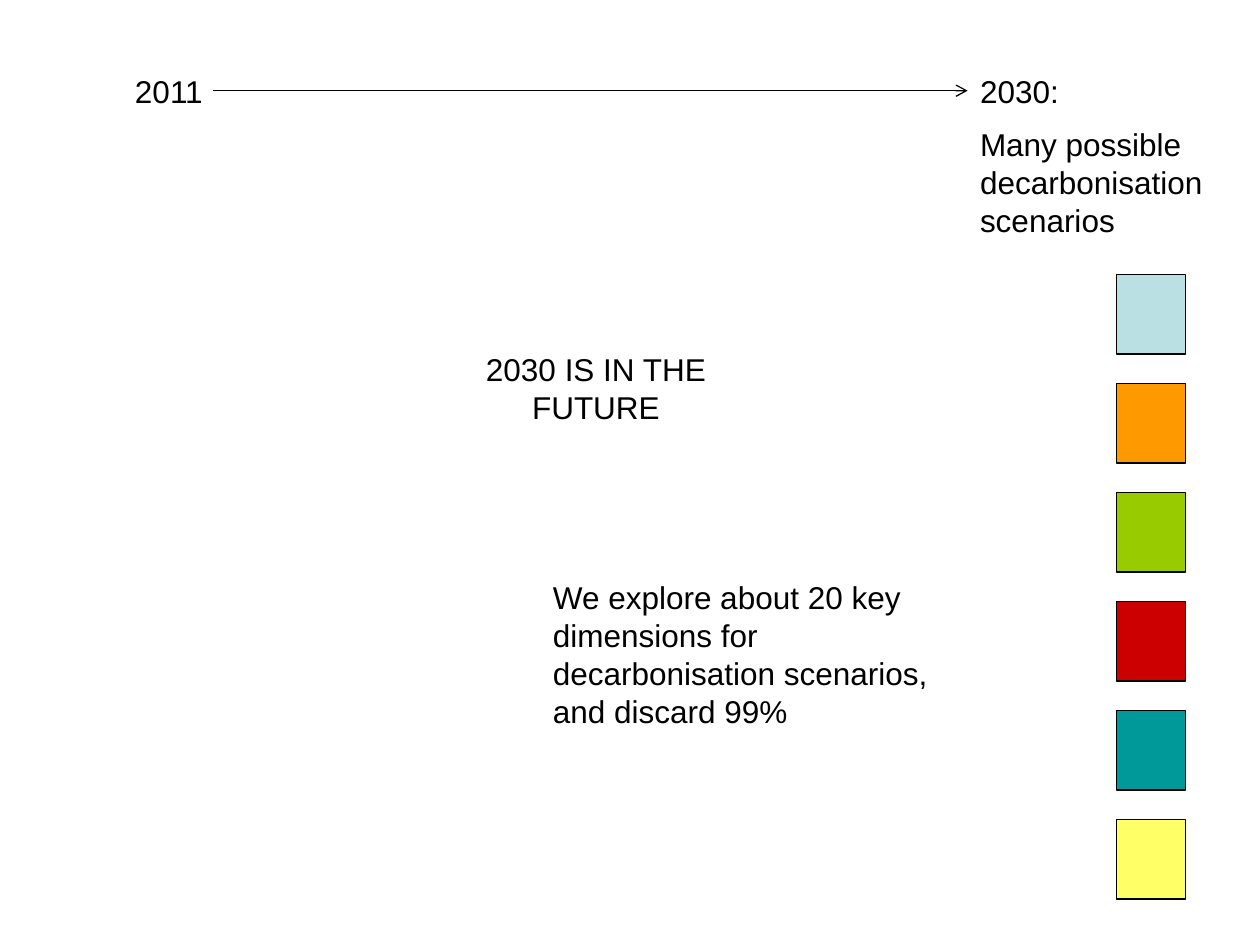
"""Build the slide on decarbonisation scenarios between 2011 and 2030."""
from lxml import etree
from pptx import Presentation
from pptx.dml.color import RGBColor
from pptx.enum.shapes import MSO_CONNECTOR, MSO_SHAPE
from pptx.enum.text import MSO_AUTO_SIZE, PP_ALIGN
from pptx.oxml.ns import qn
from pptx.util import Inches, Pt

LEFT, CENTER = PP_ALIGN.LEFT, PP_ALIGN.CENTER
GROW = MSO_AUTO_SIZE.SHAPE_TO_FIT_TEXT
RECTANGLE = MSO_SHAPE.RECTANGLE
STRAIGHT = MSO_CONNECTOR.STRAIGHT
BLACK = "000000"


def paint(color_format, color):
    color_format.fore_color.rgb = RGBColor.from_string(color)


prs = Presentation()
prs.slide_width, prs.slide_height = Inches(10), Inches(7.5)
slide = prs.slides.add_slide(prs.slide_layouts[6])

scenario_left, first_top, row_pitch = 8.86, 2.18, 0.865
scenario_colors = ["BBE0E3", "FF9900", "99CC00", "CC0000", "009999", "FFFF66"]
for row, color in enumerate(scenario_colors):
    scenario = slide.shapes.add_shape(
        RECTANGLE, Inches(scenario_left), Inches(first_top + row * row_pitch),
        Inches(0.55), Inches(0.63))
    scenario.shadow.inherit = False
    scenario.fill.solid()
    paint(scenario.fill, color)
    scenario.line.fill.solid()
    paint(scenario.line.fill, BLACK)
    scenario.line.width = Pt(0.75)

timeline_top, timeline_end = 0.52, 7.68
statements = [
    (timeline_end, timeline_top, 1.97, 1.45, LEFT,
     ["2030:", "Many possible decarbonisation scenarios"]),
    (0.59, timeline_top, 1.5, 0.4, CENTER, ["2011"]),
    (3.43, 2.73, 2.6, 0.7, CENTER, ["2030 IS IN THE FUTURE"]),
    (4.29, 4.54, 3.23, 1.31, LEFT,
     ["We explore about 20 key dimensions for decarbonisation scenarios, "
      "and discard 99%"]),
]
for left, top, width, height, alignment, lines in statements:
    statement = slide.shapes.add_textbox(
        Inches(left), Inches(top), Inches(width), Inches(height)).text_frame
    statement.word_wrap = True
    statement.auto_size = GROW
    statement.text = "\n".join(lines)
    for index, paragraph in enumerate(statement.paragraphs):
        paragraph.alignment = alignment
        paragraph.space_before = Pt(9 if index else 0)
        paragraph.font.name = "Arial"
        paragraph.font.size = Pt(18)
        paragraph.font.color.rgb = RGBColor.from_string(BLACK)

timeline_y = Inches(timeline_top + 0.2)
timeline = slide.shapes.add_connector(
    STRAIGHT, Inches(1.69), timeline_y, Inches(timeline_end), timeline_y)
timeline.line.fill.solid()
paint(timeline.line.fill, BLACK)
timeline.line.width = Pt(0.75)
outline = timeline.line._get_or_add_ln()
etree.SubElement(outline, qn("a:tailEnd"), type="arrow")
etree.SubElement(outline.getparent(), qn("a:effectLst"))

prs.save("out.pptx")
